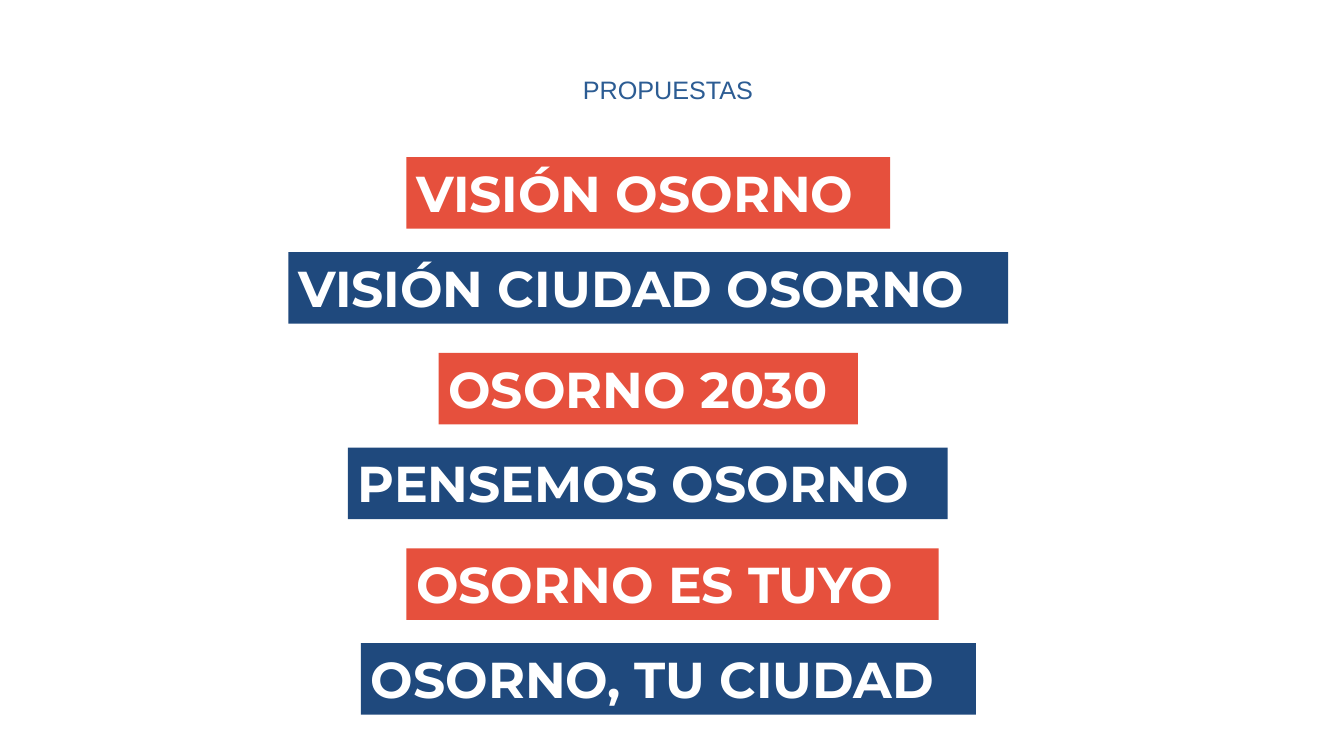
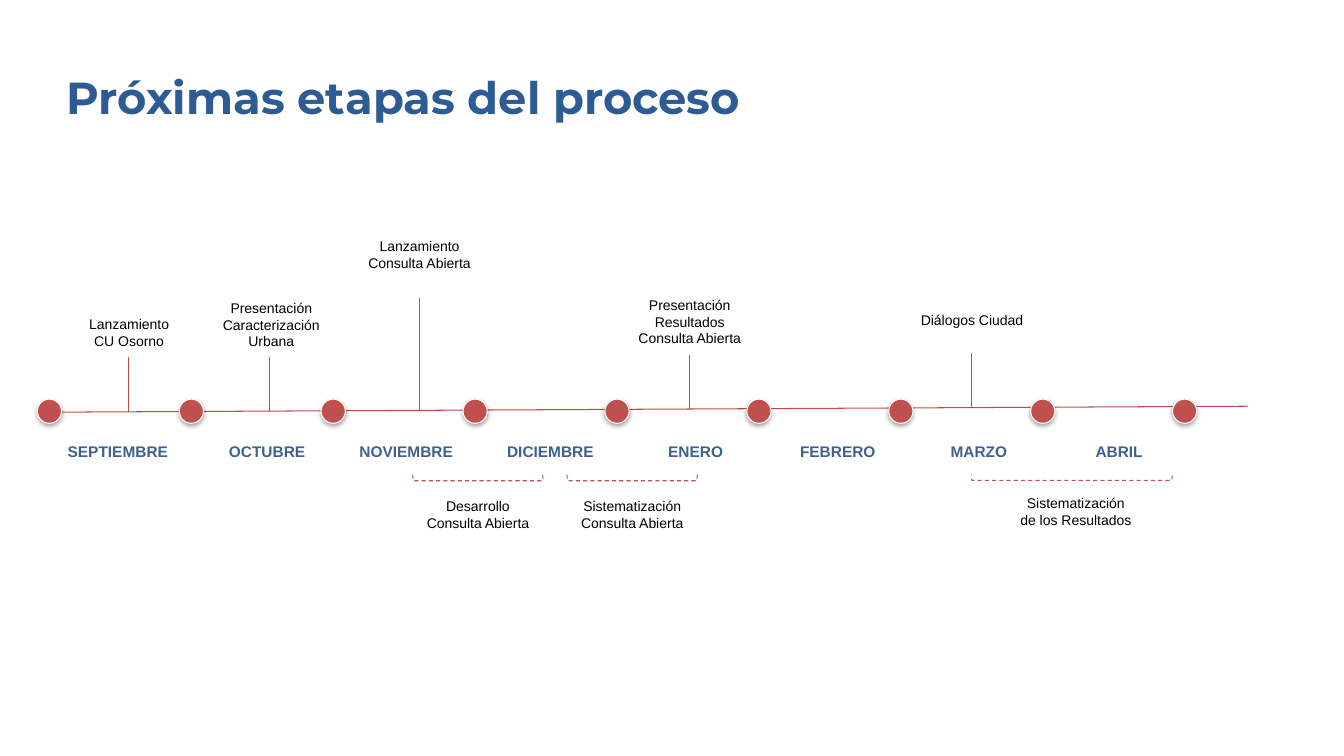
from dataclasses import dataclass

from lxml import etree
from pptx import Presentation
from pptx.dml.color import RGBColor
from pptx.enum.dml import MSO_LINE
from pptx.enum.shapes import MSO_CONNECTOR, MSO_SHAPE
from pptx.enum.text import MSO_ANCHOR, PP_ALIGN
from pptx.oxml import parse_xml
from pptx.oxml.ns import nsdecls, qn
from pptx.util import Inches, Pt

LEFT, CENTER = PP_ALIGN.LEFT, PP_ALIGN.CENTER
TOP = MSO_ANCHOR.TOP
OVAL, BRACKET = MSO_SHAPE.OVAL, MSO_SHAPE.RIGHT_BRACKET
STRAIGHT = MSO_CONNECTOR.STRAIGHT
DASH = MSO_LINE.DASH


@dataclass(frozen=True)
class TextStyle:
    font: str
    size: int
    color: str
    bold: bool = False
    line_spacing: int = 0


@dataclass(frozen=True)
class Theme:
    red: str = "E6503D"
    navy: str = "1F497D"
    white: str = "FFFFFF"
    axis: str = "BF4C48"
    marker: str = "C0504D"
    thin: float = 0.75
    heading: TextStyle = TextStyle("Montserrat", 32, "2C5C93", True, 39)
    banner: TextStyle = TextStyle("Montserrat", 36, "FFFFFF", True)
    caption: TextStyle = TextStyle("Arial", 18, "2C5C93")
    month: TextStyle = TextStyle("Arial", 11, "3F618E", True)
    label: TextStyle = TextStyle("Arial", 10, "000000")


class Deck:
    """Holds the theme, the presentation and the slide being filled."""

    def __init__(self, theme):
        self.theme = theme
        self.presentation = Presentation()
        self.presentation.slide_width = Inches(13.33)
        self.presentation.slide_height = Inches(7.5)
        self.slide = None

    def new_slide(self):
        blank = self.presentation.slide_layouts[6]
        self.slide = self.presentation.slides.add_slide(blank)

    def text(self, lines, box, style, align=CENTER, wrap=True, fill=None):
        shape = self.slide.shapes.add_textbox(*map(Inches, box))
        if fill:
            shape.fill.solid()
            shape.fill.fore_color.rgb = RGBColor.from_string(fill)
        frame = shape.text_frame
        frame.word_wrap = wrap
        frame.vertical_anchor = TOP
        for index, line in enumerate(lines):
            paragraph = frame.add_paragraph() if index else frame.paragraphs[0]
            paragraph.alignment = align
            if style.line_spacing:
                paragraph.line_spacing = Pt(style.line_spacing)
            run = paragraph.add_run()
            run.text = line
            run.font.name = style.font
            run.font.size = Pt(style.size)
            run.font.bold = style.bold
            run.font.color.rgb = RGBColor.from_string(style.color)

    def outline(self, shape, color):
        shape.line.color.rgb = RGBColor.from_string(color)
        shape.line.width = Pt(self.theme.thin)

    def line(self, x1, y1, x2, y2):
        connector = self.slide.shapes.add_connector(
            STRAIGHT, *map(Inches, (x1, y1, x2, y2)))
        self.outline(connector, self.theme.axis)
        etree.SubElement(connector._element.spPr, qn("a:effectLst"))

    def marker(self, left, top, size):
        shape = self.slide.shapes.add_shape(
            OVAL, *map(Inches, (left, top, size, size)))
        shape.fill.solid()
        shape.fill.fore_color.rgb = RGBColor.from_string(self.theme.marker)
        self.outline(shape, self.theme.white)
        # Soft shadow straight below the dot
        shape._element.spPr.append(parse_xml(
            f'<a:effectLst {nsdecls("a")}>'
            '<a:outerShdw blurRad="40000" dist="23000" dir="5400000" rotWithShape="0">'
            '<a:srgbClr val="000000"><a:alpha val="35000"/></a:srgbClr>'
            '</a:outerShdw></a:effectLst>'))

    def bracket(self, center_x, center_y, span, depth):
        """Bracket opening upwards: a right bracket turned by 90 degrees."""
        box = (center_x - depth / 2, center_y - span / 2, depth, span)
        shape = self.slide.shapes.add_shape(BRACKET, *map(Inches, box))
        shape.rotation = 90
        shape.shadow.inherit = False
        shape.fill.background()
        self.outline(shape, self.theme.marker)
        shape.line.dash_style = DASH


def build_proposals(deck):
    deck.new_slide()
    theme = deck.theme
    deck.text(["PROPUESTAS"], (5.67, 0.69, 1.91, 0.4), theme.caption, wrap=False)

    # Banners in pairs, red then navy: text, left, width
    banners = [
        ("VISIÓN OSORNO", 4.03, 4.8),
        ("VISIÓN CIUDAD OSORNO", 2.86, 7.14),
        ("OSORNO 2030", 4.35, 4.16),
        ("PENSEMOS OSORNO", 3.45, 5.95),
        ("OSORNO ES TUYO", 4.03, 5.28),
        ("OSORNO, TU CIUDAD", 3.58, 6.1),
    ]
    for index, (name, left, width) in enumerate(banners):
        pair, second = divmod(index, 2)
        top = 1.56 + 1.94 * pair + 0.94 * second
        deck.text([name], (left, top, width, 0.71), theme.banner, LEFT,
                  fill=theme.navy if second else theme.red)


def build_timeline(deck):
    deck.new_slide()
    theme = deck.theme
    deck.text(["Próximas etapas del proceso"], (0.56, 0.63, 7.96, 0.63),
              theme.heading, LEFT)

    # Axis, slightly rising to the right
    start_x, start_y, end_x, end_y = 0.39, 4.09, 12.38, 4.03
    slope = (end_y - start_y) / (end_x - start_x)
    deck.line(start_x, start_y, end_x, end_y)

    # Events above the axis: lines, label center, top, height, stem x, length
    label_width = 1.42
    events = [
        (["Lanzamiento", "CU Osorno"], 1.28, 3.08, 0.44, 1.27, 0.54),
        (["Presentación Caracterización Urbana"], 2.69, 2.92, 0.61, 2.67, 0.54),
        (["Lanzamiento Consulta Abierta"], 4.16, 2.31, 0.44, 4.16, 1.11),
        (["Presentación Resultados Consulta Abierta"], 6.84, 2.89, 0.61, 6.84, 0.54),
        (["Diálogos Ciudad"], 9.64, 3.04, 0.27, 9.64, 0.54),
    ]
    for lines, center, top, height, stem_x, length in events:
        axis_y = start_y + slope * (stem_x - start_x)
        deck.line(stem_x, axis_y, stem_x, axis_y - length)
        deck.text(lines, (center - label_width / 2, top, label_width, height),
                  theme.label)

    # Month limits
    first_marker, last_marker, marker_count = 0.37, 11.63, 9
    step = (last_marker - first_marker) / (marker_count - 1)
    for index in range(marker_count):
        deck.marker(first_marker + step * index, 3.96, 0.24)

    # Month names: text, center
    month_width = 1.3
    months = [
        ("SEPTIEMBRE", 1.17), ("OCTUBRE", 2.65), ("NOVIEMBRE", 4.03),
        ("DICIEMBRE", 5.46), ("ENERO", 6.9), ("FEBRERO", 8.31),
        ("MARZO", 9.71), ("ABRIL", 11.1),
    ]
    for name, center in months:
        deck.text([name], (center - month_width / 2, 4.34, month_width, 0.29),
                  theme.month, wrap=False)

    # Periods below: lines, bracket center, span, depth, label center, top
    periods = [
        (["Desarrollo", "Consulta Abierta"], 4.74, 1.29, 0.06, 4.74, 4.89),
        (["Sistematización", "Consulta Abierta"], 6.27, 1.29, 0.06, 6.27, 4.89),
        (["Sistematización", "de los Resultados"], 10.63, 1.99, 0.05, 10.67, 4.86),
    ]
    for lines, bracket_x, span, depth, center, top in periods:
        deck.bracket(bracket_x, 4.74, span, depth)
        deck.text(lines, (center - label_width / 2, top, label_width, 0.44),
                  theme.label)


def main():
    deck = Deck(Theme())
    build_proposals(deck)
    build_timeline(deck)
    deck.presentation.save("out.pptx")


if __name__ == "__main__":
    main()
